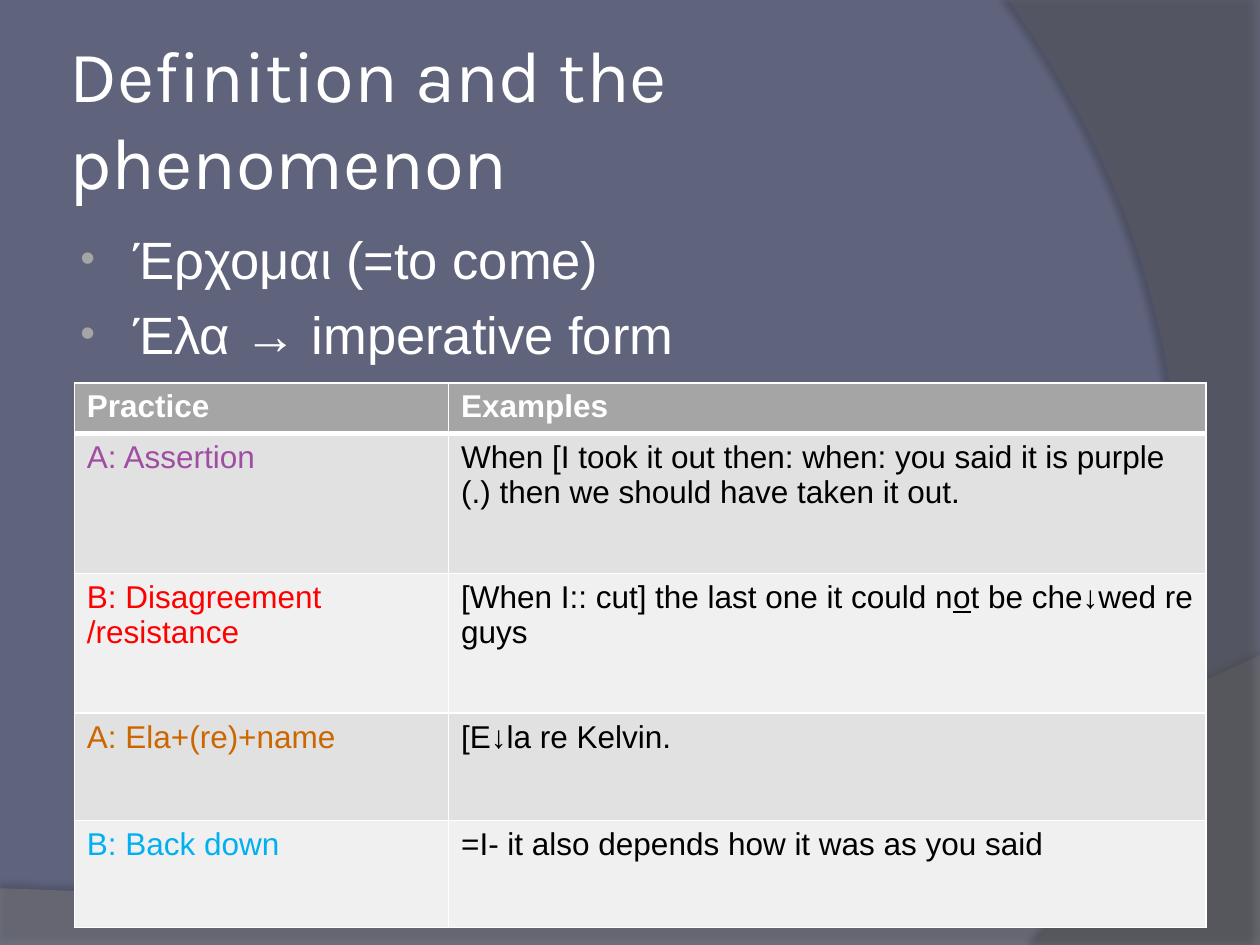
from dataclasses import dataclass

from lxml.etree import SubElement
from pptx import Presentation
from pptx.dml.color import RGBColor as RGB
from pptx.enum.text import MSO_ANCHOR as Anchor
from pptx.oxml.ns import qn
from pptx.util import Inches, Pt


@dataclass(frozen=True)
class Theme:
    background: str = "5F637C"
    wave: str = "7F7F7F"
    arc: str = "5E5E5E"
    shadow: str = "000000"
    light: str = "FFFFFF"
    dark: str = "000000"
    accent: str = "A5A5A5"
    bands: tuple = ("E1E1E1", "F0F0F0")
    title_font: str = "Karla"
    body_font: str = "Arial"
    title_size: float = 41.4
    body_size: float = 30
    table_size: float = 18


THEME = Theme()
COLUMN_WIDTHS = (2.97, 6.01)
ROW_HEIGHTS = (0.39, 1.11, 1.11, 0.85, 0.85)
HEADERS = ("Practice", "Examples")
# Practice, its colour, and the example as text pieces; every second piece is underlined.
PRACTICES = (
    ("A: Assertion", "A04DA3",
     ("When [I took it out then: when: you said it is purple "
      "(.) then we should have taken it out.",)),
    ("B: Disagreement /resistance", "FF0000",
     ("[When I:: cut] the last one it could n", "o", "t be che↓wed re guys")),
    ("A: Ela+(re)+name", "CC6600", ("[E↓la re Kelvin.",)),
    ("B: Back down", "00B0F0", ("=I- it also depends how it was as you said",)),
)


def add_xml(parent, tag, **attributes):
    return SubElement(parent, qn(tag), {name: str(value) for name, value in attributes.items()})


def add_color(parent, color, opacity=100):
    element = add_xml(parent, "a:srgbClr", val=color)
    if opacity < 100:
        add_xml(element, "a:alpha", val=opacity * 1000)


def add_run(paragraph, text, color, **font_values):
    run = paragraph.add_run()
    run.text = text
    run.font.color.rgb = RGB.from_string(color)
    for name, value in font_values.items():
        setattr(run.font, name, value)


def curve(start, control_1, control_2, end, steps=48):
    """Return points along a cubic Bézier curve."""
    points = []
    for step in range(steps + 1):
        t = step / steps
        weights = ((1 - t) ** 3, 3 * t * (1 - t) ** 2, 3 * t * t * (1 - t), t ** 3)
        corners = (start, control_1, control_2, end)
        points.append(tuple(sum(weight * corner[axis] for weight, corner in zip(weights, corners))
                            for axis in (0, 1)))
    return points


def add_backdrop(slide, points, color, opacity, shadow_opacity, distance, direction):
    """Add a translucent outline with a soft shadow."""
    corners = [(Inches(x), Inches(y)) for x, y in points]
    builder = slide.shapes.build_freeform(*corners[0])
    builder.add_line_segments(corners[1:], close=True)
    shape = builder.convert_to_shape()
    shape.line.fill.background()
    shape.fill.solid()
    shape.fill.fore_color.rgb = RGB.from_string(color)
    properties = shape.element.spPr
    fill_color = properties.find(qn("a:solidFill")).find(qn("a:srgbClr"))
    add_xml(fill_color, "a:alpha", val=opacity * 1000)
    shape.shadow.inherit = False
    shadow = add_xml(properties.find(qn("a:effectLst")), "a:outerShdw", blurRad=Pt(4),
                     dist=Pt(distance), dir=direction * 60000, rotWithShape=0)
    add_color(shadow, THEME.shadow, shadow_opacity)


def add_text_frame(slide, bounds, **frame_values):
    frame = slide.shapes.add_textbox(*map(Inches, bounds)).text_frame
    frame.word_wrap = True
    for name, value in frame_values.items():
        setattr(frame, name, value)
    return frame


def add_title(slide, text):
    margins = {f"margin_{side}": Inches(0.05) for side in ("left", "top", "right", "bottom")}
    frame = add_text_frame(slide, (0.5, 0.3, 8.17, 1.25),
                           vertical_anchor=Anchor.MIDDLE, **margins)
    add_run(frame.paragraphs[0], text, THEME.light,
            name=THEME.title_font, size=Pt(THEME.title_size))


def add_bullets(slide, items):
    frame = add_text_frame(slide, (0.5, 1.75, 8.17, 4.95))
    for index, text in enumerate(items):
        paragraph = frame.add_paragraph() if index else frame.paragraphs[0]
        paragraph.space_before = Pt(7)
        properties = paragraph._p.get_or_add_pPr()
        properties.set("marL", str(Inches(0.46)))
        properties.set("indent", str(Inches(-0.42)))
        add_color(add_xml(properties, "a:buClr"), THEME.accent)
        add_xml(properties, "a:buSzPct", val=80000)
        add_xml(properties, "a:buFont", typeface=THEME.body_font)
        add_xml(properties, "a:buChar", char="•")
        add_run(paragraph, text, THEME.light, name=THEME.body_font, size=Pt(THEME.body_size))


def fill_cell(cell, pieces, color, fill, bold=False, top=1, bottom=1):
    for index, text in enumerate(pieces):
        add_run(cell.text_frame.paragraphs[0], text, color, name=THEME.body_font,
                size=Pt(THEME.table_size), bold=bold, underline=index % 2 == 1)
    properties = cell._tc.get_or_add_tcPr()
    for side, width in (("L", 1), ("R", 1), ("T", top), ("B", bottom)):
        border = add_xml(properties, f"a:ln{side}", w=Pt(width))
        add_color(add_xml(border, "a:solidFill"), THEME.light)
    cell.fill.solid()
    cell.fill.fore_color.rgb = RGB.from_string(fill)


def add_practice_table(slide):
    bounds = (0.59, 3.04, sum(COLUMN_WIDTHS), sum(ROW_HEIGHTS))
    table = slide.shapes.add_table(len(ROW_HEIGHTS), len(COLUMN_WIDTHS),
                                   *map(Inches, bounds)).table
    for column, width in zip(table.columns, COLUMN_WIDTHS):
        column.width = Inches(width)
    for row, height in zip(table.rows, ROW_HEIGHTS):
        row.height = Inches(height)
    for column, text in enumerate(HEADERS):
        fill_cell(table.cell(0, column), (text,), THEME.light, THEME.accent,
                  bold=True, bottom=3)
    for row, (practice, color, example) in enumerate(PRACTICES, start=1):
        fill = THEME.bands[(row - 1) % 2]
        top = 3 if row == 1 else 1
        fill_cell(table.cell(row, 0), (practice,), color, fill, top=top)
        fill_cell(table.cell(row, 1), example, THEME.dark, fill, top=top)


def main():
    presentation = Presentation()
    presentation.slide_width, presentation.slide_height = Inches(10), Inches(7.5)
    slide = presentation.slides.add_slide(presentation.slide_layouts[6])
    slide.background.fill.solid()
    slide.background.fill.fore_color.rgb = RGB.from_string(THEME.background)

    wave = [(0, 7.51), (10, 7.51)] + curve((10, 5.2), (5.59, 7.29), (3.91, 7.19), (0, 7.05))
    arc = [(10, 0), (10, 7.5)] + curve((8.21, 7.5), (9.35, 6.19), (10.18, 3), (8, 0))
    add_backdrop(slide, wave, THEME.wave, 45, shadow_opacity=35, distance=3.5, direction=270)
    add_backdrop(slide, arc, THEME.arc, 40, shadow_opacity=45, distance=4, direction=180)

    add_title(slide, "Definition and the phenomenon")
    add_bullets(slide, ("Έρχομαι (=to come)", "Έλα → imperative form"))
    add_practice_table(slide)
    presentation.save("out.pptx")


if __name__ == "__main__":
    main()
